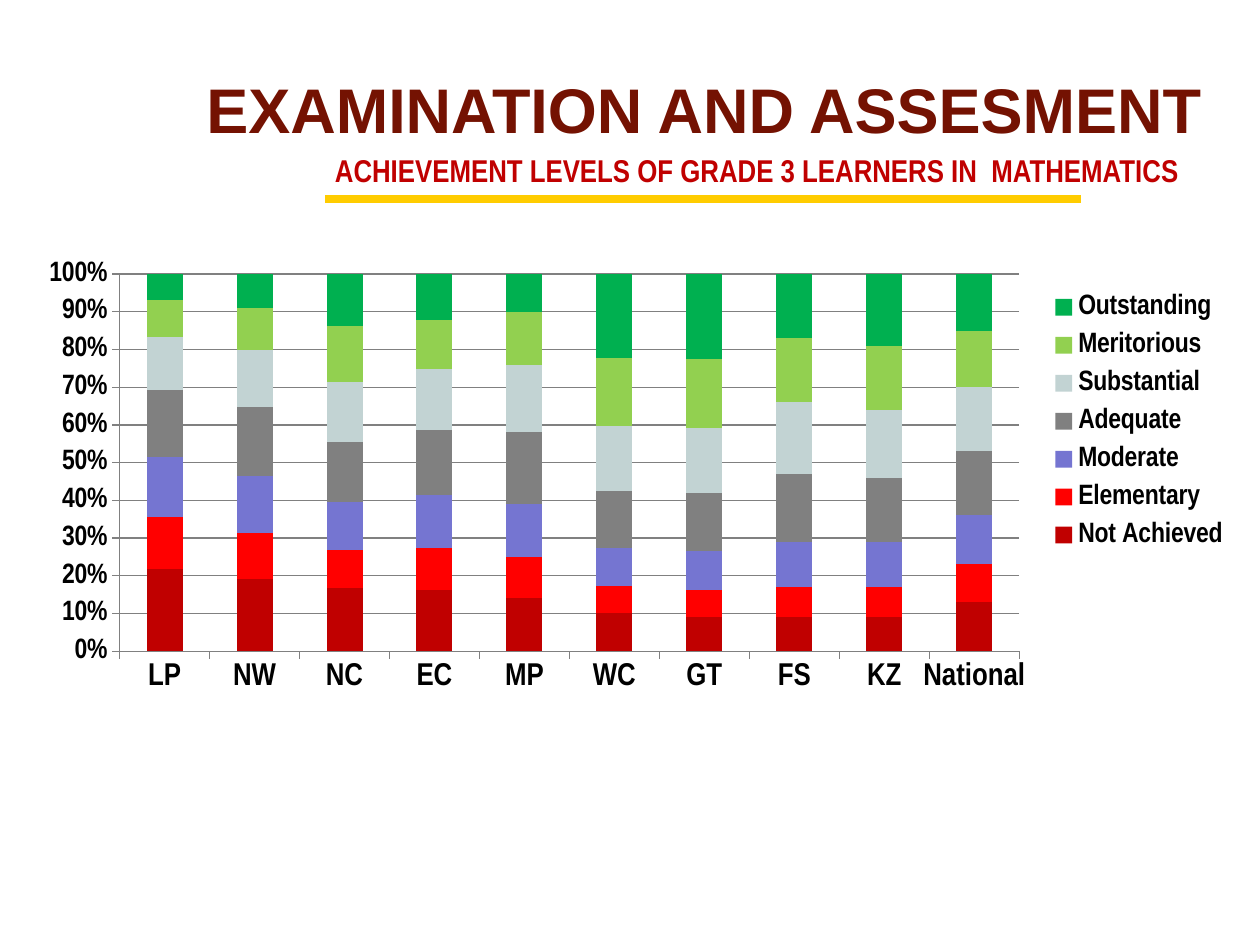
import pptx
import pptx.chart.data
import pptx.dml.color
import pptx.enum.chart
import pptx.enum.shapes
import pptx.enum.text
import pptx.oxml
import pptx.oxml.ns
import pptx.util

Inches, Pt = pptx.util.Inches, pptx.util.Pt
RGB = pptx.dml.color.RGBColor
MAROON = RGB(0x74, 0x12, 0x02)
RED = RGB(0xC0, 0x00, 0x00)
GOLD = RGB(0xFF, 0xCC, 0x00)
GREY = RGB(0x80, 0x80, 0x80)
BLACK = RGB(0x00, 0x00, 0x00)

AREAS = ["LP", "NW", "NC", "EC", "MP", "WC", "GT", "FS", "KZ", "National"]
LEVELS = [
    ("Not Achieved", RED, [22, 19, 17, 16, 14, 10, 9, 9, 9, 13]),
    ("Elementary", RGB(0xFF, 0x00, 0x00), [14, 12, 10, 11, 11, 7, 7, 8, 8, 10]),
    ("Moderate", RGB(0x75, 0x75, 0xD1), [16, 15, 13, 14, 14, 10, 10, 12, 12, 13]),
    ("Adequate", GREY, [18, 18, 16, 17, 19, 15, 15, 18, 17, 17]),
    ("Substantial", RGB(0xC2, 0xD3, 0xD3), [14, 15, 16, 16, 18, 17, 17, 19, 18, 17]),
    ("Meritorious", RGB(0x92, 0xD0, 0x50), [10, 11, 15, 13, 14, 18, 18, 17, 17, 15]),
    ("Outstanding", RGB(0x00, 0xB0, 0x50), [7, 9, 14, 12, 10, 22, 22, 17, 19, 15]),
]


def style(font, size, color, name="Arial Narrow"):
    look = {"name": name, "size": Pt(size), "bold": True}
    for key, val in look.items():
        setattr(font, key, val)
    font.color.rgb = color


def add_text(slide, box, text, size, color, name, form):
    frame = slide.shapes.add_textbox(*map(Inches, box)).text_frame
    for key, val in form.items():
        setattr(frame, key, val)
    run = frame.paragraphs[0].add_run()
    run.text = text
    style(run.font, size, color, name)


def add_head(slide, box):
    left, top, width = box
    # Title and subtitle
    add_text(slide, (left, top, width, 0.47), "EXAMINATION AND ASSESMENT",
             36, MAROON, "Arial", {"word_wrap": True, "margin_top": Inches(0.12)})
    add_text(slide, (left + 1.02, top + 0.71, 7.3, 0.4),
             "ACHIEVEMENT LEVELS OF GRADE 3 LEARNERS IN  MATHEMATICS",
             18, RED, "Arial Narrow",
             {"word_wrap": False,
              "vertical_anchor": pptx.enum.text.MSO_ANCHOR.MIDDLE})
    # Gold rule
    start, level = Inches(left + 1.04), Inches(top + 1.14)
    rule = slide.shapes.add_connector(
        pptx.enum.shapes.MSO_CONNECTOR.STRAIGHT,
        start, level, start + Inches(6), level)
    rule.line.color.rgb = GOLD
    rule.line.width = Pt(4.5)
    rule._element.spPr.append(pptx.oxml.parse_xml(
        "<a:effectLst %s/>" % pptx.oxml.ns.nsdecls("a")))


def set_place(part, box, inner=False):
    """Fix the layout of a chart part as fractions of the chart."""
    tags = [("layoutTarget", "inner")] if inner else []
    tags += [("xMode", "edge"), ("yMode", "edge")]
    tags += zip("xywh", box)
    body = "".join('<c:%s val="%s"/>' % tag for tag in tags)
    for old in part.findall(pptx.oxml.ns.qn("c:layout")):
        part.remove(old)
    node = pptx.oxml.parse_xml(
        "<c:layout %s><c:manualLayout>%s</c:manualLayout></c:layout>"
        % (pptx.oxml.ns.nsdecls("c"), body))
    part.insert(0 if inner else 1, node)


def add_levels(slide, box):
    data = pptx.chart.data.CategoryChartData()
    data.categories = AREAS
    for name, color, vals in LEVELS:
        data.add_series(name, vals)
    chart = slide.shapes.add_chart(
        pptx.enum.chart.XL_CHART_TYPE.COLUMN_STACKED_100,
        *map(Inches, box), data).chart
    chart.has_title = False
    chart.font.name = "Arial"
    chart.font.size = Pt(10)

    # Columns
    plot = chart.plots[0]
    form = {"gap_width": 150, "overlap": 100, "vary_by_categories": False}
    for key, val in form.items():
        setattr(plot, key, val)
    for bar, (name, color, vals) in zip(plot.series, LEVELS):
        bar.format.fill.solid()
        bar.format.fill.fore_color.rgb = color

    # Axes
    for axis, size in ((chart.category_axis, 18), (chart.value_axis, 16)):
        style(axis.tick_labels.font, size, BLACK)
        axis.format.line.color.rgb = GREY
        axis.major_tick_mark = pptx.enum.chart.XL_TICK_MARK.OUTSIDE
    scale = {"minimum_scale": 0, "maximum_scale": 1, "major_unit": 0.1}
    for key, val in scale.items():
        setattr(chart.value_axis, key, val)
    chart.value_axis.major_gridlines.format.line.color.rgb = GREY
    labels = chart.value_axis.tick_labels
    labels.number_format = "0%"
    labels.number_format_is_linked = False

    # Legend
    chart.has_legend = True
    chart.legend.position = pptx.enum.chart.XL_LEGEND_POSITION.RIGHT
    chart.legend.include_in_layout = False
    style(chart.legend.font, 16, BLACK)

    set_place(chart.legend._element, (0.84, 0.22, 0.16, 0.39))
    area = chart._chartSpace.chart.plotArea
    set_place(area, (0.078, 0.209, 0.743, 0.528), inner=True)


def main():
    deck = pptx.Presentation()
    deck.slide_width, deck.slide_height = Inches(10), Inches(7.5)
    slide = deck.slides.add_slide(deck.slide_layouts[6])
    add_levels(slide, (0.2, 0.99, 9.61, 5.67))
    add_head(slide, (1.54, 0.44, 8.14))
    deck.save("out.pptx")


if __name__ == "__main__":
    main()
